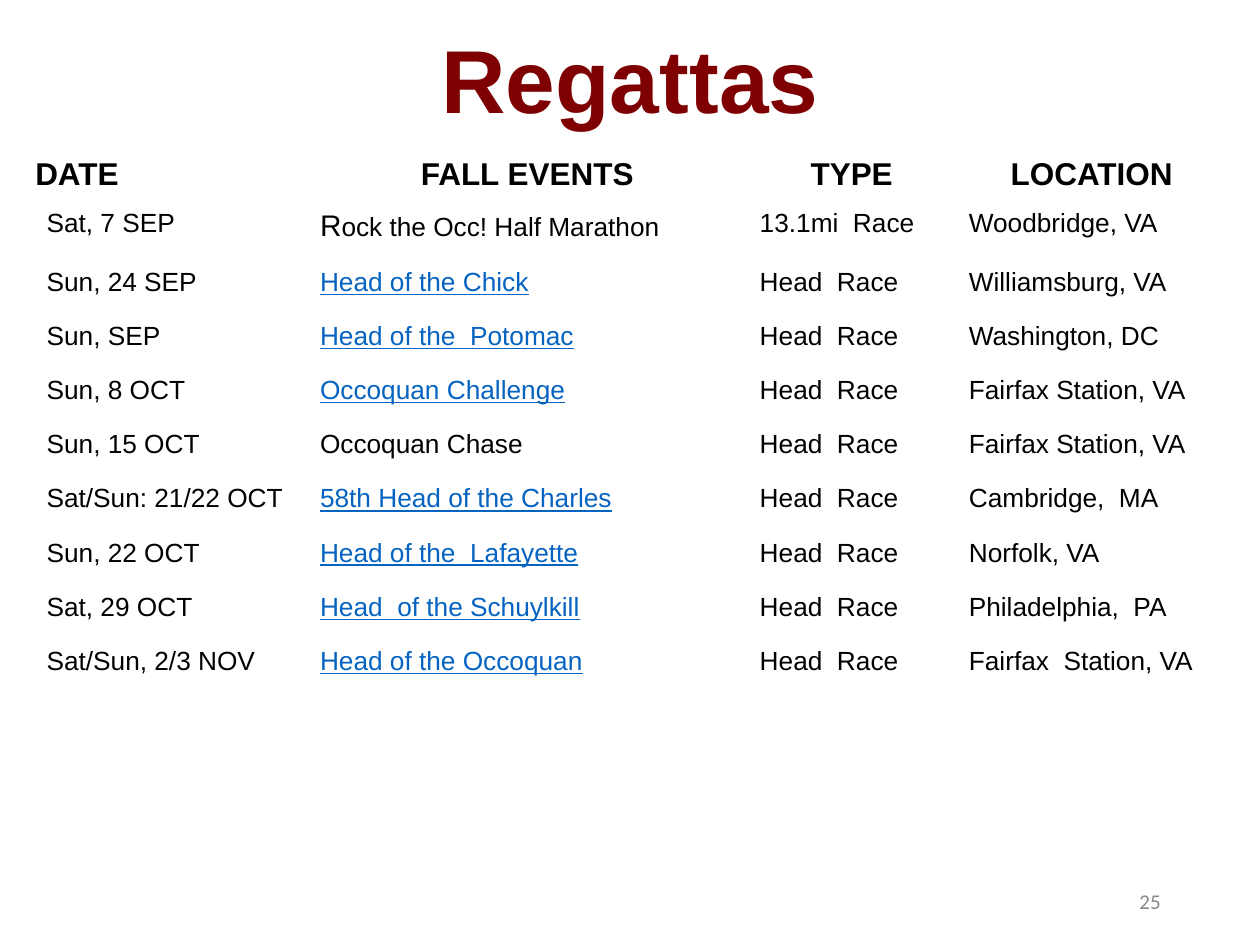
"""Build the slide that lists the fall regattas."""
import pptx
import pptx.dml.color
import pptx.enum.text
import pptx.util

Inches = pptx.util.Inches
Pt = pptx.util.Pt
RGBColor = pptx.dml.color.RGBColor
ALIGN = pptx.enum.text.PP_ALIGN
ANCHOR = pptx.enum.text.MSO_ANCHOR

BLACK = RGBColor(0x00, 0x00, 0x00)
MAROON = RGBColor(0x7E, 0x00, 0x00)
BLUE = RGBColor(0x05, 0x63, 0xC1)
GREY = RGBColor(0x88, 0x88, 0x88)

HEADS = ["DATE", "FALL EVENTS", "TYPE", "LOCATION"]
RACE = "Head  Race"
EVENTS = [
    ("Sat, 7 SEP", "Rock the Occ! Half Marathon", "13.1mi  Race", "Woodbridge, VA"),
    ("Sun, 24 SEP", "Head of the Chick", RACE, "Williamsburg, VA"),
    ("Sun, SEP", "Head of the  Potomac", RACE, "Washington, DC"),
    ("Sun, 8 OCT", "Occoquan Challenge", RACE, "Fairfax Station, VA"),
    ("Sun, 15 OCT", "Occoquan Chase", RACE, "Fairfax Station, VA"),
    ("Sat/Sun: 21/22 OCT", "58th Head of the Charles", RACE, "Cambridge,  MA"),
    ("Sun, 22 OCT", "Head of the  Lafayette", RACE, "Norfolk, VA"),
    ("Sat, 29 OCT", "Head  of the Schuylkill", RACE, "Philadelphia,  PA"),
    ("Sat/Sun, 2/3 NOV", "Head of the Occoquan", RACE, "Fairfax  Station, VA"),
]
PLAIN = {"Rock the Occ! Half Marathon", "Occoquan Chase"}
WIDTHS = [2.17, 3.49, 1.66, 2.15]
HEIGHTS = [0.38, 0.29] + [0.31] * 8


class Deck:
    """Hold the font and the current slide, and add elements to it."""

    def __init__(self, slide, face="Arial"):
        self.slide = slide
        self.face = face

    def style(self, para, size, color=BLACK, bold=False, align=ALIGN.LEFT, face=None):
        para.alignment = align
        font = para.font
        font.name = face or self.face
        font.size = Pt(size)
        font.bold = bold
        font.color.rgb = color

    def text(self, box, words, size, pad=0.05, space=None, **look):
        frame = self.slide.shapes.add_textbox(*map(Inches, box)).text_frame
        frame.word_wrap = True
        frame.vertical_anchor = ANCHOR.MIDDLE
        frame.margin_left = frame.margin_right = Inches(0.1)
        frame.margin_top = frame.margin_bottom = Inches(pad)
        para = frame.paragraphs[0]
        para.text = words
        para.line_spacing = space
        self.style(para, size, **look)

    def cell(self, cell, words, size, side, top, base, **look):
        cell.fill.background()
        cell.margin_left = cell.margin_right = Inches(side)
        cell.margin_top = Inches(top)
        cell.margin_bottom = Inches(base)
        para = cell.text_frame.paragraphs[0]
        para.text = words
        self.style(para, size, **look)
        return para

    def table(self, left, top):
        shape = self.slide.shapes.add_table(
            len(HEIGHTS), len(WIDTHS), Inches(left), Inches(top),
            Inches(sum(WIDTHS)), Inches(sum(HEIGHTS)))
        grid = shape.table
        grid.first_row = grid.horz_banding = False
        for col, width in zip(grid.columns, WIDTHS):
            col.width = Inches(width)
        for row, height in zip(grid.rows, HEIGHTS):
            row.height = Inches(height)
        for col, head in enumerate(HEADS):
            cell = grid.cell(0, col)
            cell.vertical_anchor = ANCHOR.MIDDLE
            self.cell(cell, head, 18, 0.01, 0.01, 0, bold=True,
                      align=ALIGN.CENTER if col else ALIGN.LEFT)
        for row, event in enumerate(EVENTS, 1):
            for col, words in enumerate(event):
                link = col == 1 and words not in PLAIN
                para = self.cell(grid.cell(row, col), words, 15, 0.1, 0.09, 0.09,
                                 color=BLUE if link else BLACK)
                if link:
                    para.font.underline = True
        first = grid.cell(1, 1).text_frame.paragraphs[0]
        words = EVENTS[0][1]
        first.runs[0].text = words[0]
        first.runs[0].font.size = Pt(17)
        first.add_run().text = words[1:]


def main():
    deck = pptx.Presentation()
    deck.slide_width = Inches(10)
    deck.slide_height = Inches(7.5)
    page = Deck(deck.slides.add_slide(deck.slide_layouts[6]))
    page.text((7.06, 6.95, 2.25, 0.4), "25", 12, color=GREY,
              align=ALIGN.RIGHT, face="Calibri")
    page.text((0, 0, 10, 1.34), "Regattas", 51, pad=0.1, space=0.9,
              color=MAROON, bold=True, align=ALIGN.CENTER)
    page.table(0.27, 1.19)
    deck.save("out.pptx")


if __name__ == "__main__":
    main()
